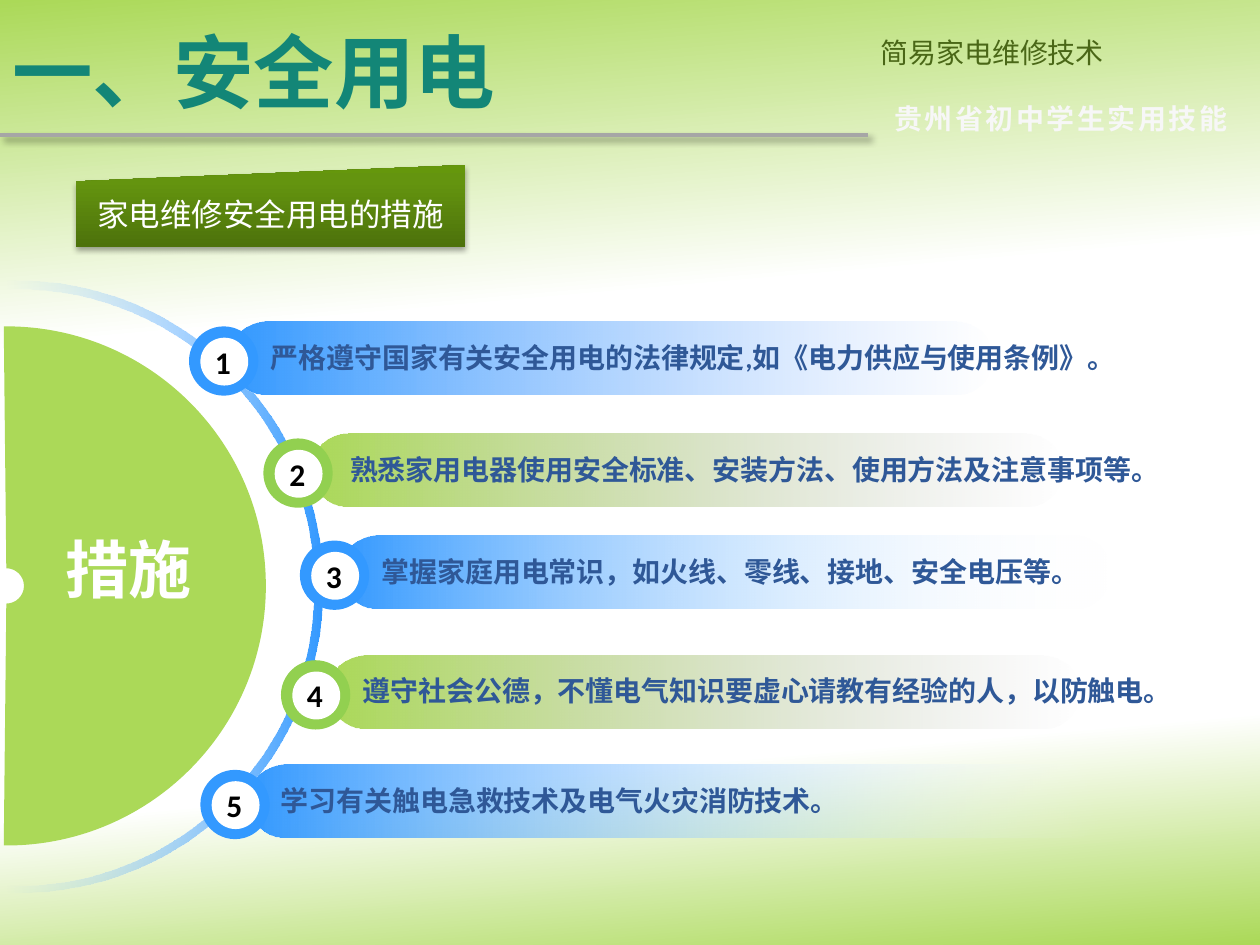
from math import cos, pi, sin

from lxml import etree
from pptx import Presentation
from pptx.dml.color import RGBColor
from pptx.enum.shapes import MSO_CONNECTOR, MSO_SHAPE
from pptx.enum.text import MSO_ANCHOR, MSO_AUTO_SIZE, PP_ALIGN
from pptx.oxml.ns import qn
from pptx.util import Inches, Pt

COLUMN = Inches(1)
ROW = Inches(1)
BANNER = MSO_SHAPE.FLOWCHART_MANUAL_INPUT
BAR = MSO_SHAPE.ROUNDED_RECTANGLE
CIRCLE = MSO_SHAPE.OVAL
STRAIGHT = MSO_CONNECTOR.STRAIGHT
LEFT, CENTER, JUSTIFY = PP_ALIGN.LEFT, PP_ALIGN.CENTER, PP_ALIGN.JUSTIFY
MIDDLE = MSO_ANCHOR.MIDDLE
FIXED, GROW = MSO_AUTO_SIZE.NONE, MSO_AUTO_SIZE.SHAPE_TO_FIT_TEXT

CJK = "Noto Sans CJK SC"
LATIN = "Calibri"
BLUE, LIME, GREEN, WHITE = "3399FF", "ABD958", "92D050", "FFFFFF"
BLUE_FADE = [(0, BLUE, 100), (100, WHITE, 0)]
PALE_BLUE_FADE = [(0, BLUE, 100), (100, "95BCFF", 0)]
LIME_FADE = [(0, LIME, 100), (100, "B5B5B5", 0)]

MEASURES = [
    (1.5, 2.59, 1.82, 6.06, 2.05, BLUE, PALE_BLUE_FADE,
     "严格遵守国家有关安全用电的法律规定,如《电力供应与使用条例》。"),
    (2.09, 3.48, 2.47, 5.96, 2.68, GREEN, LIME_FADE,
     "熟悉家用电器使用安全标准、安装方法、使用方法及注意事项等。"),
    (2.38, 4.29, 2.7, 6.11, 2.93, BLUE, BLUE_FADE,
     "掌握家庭用电常识，如火线、零线、接地、安全电压等。"),
    (2.23, 5.24, 2.61, 5.96, 2.78, GREEN, LIME_FADE,
     "遵守社会公德，不懂电气知识要虚心请教有经验的人，以防触电。"),
    (1.59, 6.11, 1.97, 6.83, 2.13, BLUE, BLUE_FADE,
     "学习有关触电急救技术及电气火灾消防技术。"),
]


def color(value):
    return RGBColor.from_string(value)


def place(left, top, width, height):
    return (int(left * COLUMN), int(top * ROW),
            int(width * COLUMN), int(height * ROW))


def add_color(parent, value, alpha):
    node = etree.SubElement(parent, qn("a:srgbClr"), val=value)
    if alpha < 100:
        etree.SubElement(node, qn("a:alpha"), val=str(alpha * 1000))


def set_gradient(fill, element, stops, angle=0):
    fill.gradient()
    gradient = element.find(".//" + qn("a:gradFill"))
    stop_list = gradient.find(qn("a:gsLst"))
    for stop in list(stop_list):
        stop_list.remove(stop)
    for position, value, alpha in stops:
        stop = etree.SubElement(stop_list, qn("a:gs"), pos=str(position * 1000))
        add_color(stop, value, alpha)
    gradient.find(qn("a:lin")).set("ang", str(angle * 60000))


def set_shadow(element, alpha, blur, distance, angle):
    properties = element.spPr
    effects = properties.find(qn("a:effectLst"))
    if effects is None:
        effects = etree.SubElement(properties, qn("a:effectLst"))
    shadow = etree.SubElement(
        effects, qn("a:outerShdw"), blurRad=str(Pt(blur)), dist=str(Pt(distance)),
        dir=str(angle * 60000), algn="ctr", rotWithShape="0")
    add_color(shadow, "000000", alpha)


def paint(shape, fill, angle=0):
    shape.shadow.inherit = False
    shape.line.fill.background()
    if isinstance(fill, str):
        shape.fill.solid()
        shape.fill.fore_color.rgb = color(fill)
    else:
        set_gradient(shape.fill, shape._element, fill, angle)


def add_shape(shapes, kind, area, fill, angle=0):
    shape = shapes.add_shape(kind, *place(*area))
    paint(shape, fill, angle)
    return shape


def write(shape, text, size, value, font=CJK, bold=False, align=LEFT, spacing=0):
    para = shape.text_frame.paragraphs[0]
    para.text = text
    para.alignment = align
    para.font.size = Pt(size)
    para.font.bold = bold
    para.font.name = font
    para.font.color.rgb = color(value)
    style = para._p.pPr.find(qn("a:defRPr"))
    etree.SubElement(style, qn("a:ea"), typeface=CJK)
    if spacing:
        style.set("spc", str(int(spacing * 100)))


def add_text(shapes, area, text, size, value, wrap=True, resize=GROW, **style):
    box = shapes.add_textbox(*place(*area))
    box.text_frame.word_wrap = wrap
    box.text_frame.auto_size = resize
    write(box, text, size, value, **style)
    return box


def quarter_arcs(x, y, radius, turn):
    pull = 4 / 3 * (2 ** 0.5 - 1) * turn
    curves = []
    for start in (-turn * pi / 2, 0):
        end = start + turn * pi / 2
        curves.append([
            (x + radius * (cos(start) - pull * sin(start)),
             y + radius * (sin(start) + pull * cos(start))),
            (x + radius * (cos(end) + pull * sin(end)),
             y + radius * (sin(end) - pull * cos(end))),
            (x + radius * cos(end), y + radius * sin(end))])
    return curves


def add_outline(shapes, area, start, pieces, fill):
    left, top, width, height = place(*area)
    corners = [(int(x * COLUMN), int(y * ROW))
               for x, y in [start] + [piece[-1] for piece in pieces]]
    builder = shapes.build_freeform(*corners[0])
    builder.add_line_segments(corners[1:], close=True)
    shape = builder.convert_to_shape()
    shape.left, shape.top, shape.width, shape.height = left, top, width, height
    outline = shape._element.find(".//" + qn("a:pathLst"))[0]
    outline.set("w", str(width))
    outline.set("h", str(height))
    for segment, points in zip(list(outline), [[start]] + pieces):
        if len(points) == 3:
            curve = etree.Element(qn("a:cubicBezTo"))
            outline.replace(segment, curve)
            segment = curve
        for point in list(segment):
            segment.remove(point)
        for x, y in points:
            etree.SubElement(segment, qn("a:pt"), x=str(int(x * COLUMN) - left),
                             y=str(int(y * ROW) - top))
    paint(shape, fill)


def add_header(shapes):
    banner = add_shape(shapes, BANNER, (0.6, 1.31, 3.09, 0.65),
                       [(0, "4D720B", 100), (80, "64940F", 100), (100, "65970C", 100)], 270)
    set_shadow(banner._element, 35, 3.1, 1.8, 90)
    banner.text_frame.vertical_anchor = MIDDLE
    write(banner, "家电维修安全用电的措施", 18, WHITE, align=CENTER)

    left, top, right, bottom = place(0, 1.07, 6.89, 1.07)
    rule = shapes.add_connector(STRAIGHT, left, top, right, bottom)
    rule.line.color.rgb = color("A6A6A6")
    rule.line.width = Pt(2.25)
    set_shadow(rule._element, 40, 4, 3, 45)

    add_text(shapes, (6.89, 0.23, 3.11, 0.37), "简易家电维修技术", 16, "4A6717", align=JUSTIFY)
    add_text(shapes, (7, 0.76, 3, 0.37), "贵州省初中学生实用技能", 16, "F7F7F7",
             bold=True, spacing=1.5)
    title = add_text(shapes, (0, 0.05, 6.89, 1.02), "一、安全用电", 46, "138677",
                     resize=FIXED, bold=True)
    title.text_frame.vertical_anchor = MIDDLE


def add_hub(shapes):
    ring = ([[(0.13, 2.3)]] + quarter_arcs(0.13, 4.66, 2.36, 1)
            + [[(0.05, 7.02)], [(0.05, 7.08)], [(0.13, 7.08)]]
            + quarter_arcs(0.13, 4.66, 2.43, -1) + [[(0.05, 2.23)]])
    add_outline(shapes, (-2.29, 2.23, 4.85, 4.85), (0.05, 2.3), ring,
                [(0, WHITE, 0), (100, BLUE, 100)])
    half_disk = (quarter_arcs(0.05, 4.65, 0.14, 1) + [[(0.03, 6.71)], [(0.05, 6.71)]]
                 + quarter_arcs(0.05, 4.65, 2.06, -1) + [[(0.03, 2.59)]])
    add_outline(shapes, (-2.01, 2.59, 4.12, 4.12), (0.05, 4.51), half_disk, LIME)


def add_measure(shapes, number, measure):
    left, top, bar_left, bar_width, text_left, accent, fade, text = measure
    bar = add_shape(shapes, BAR, (bar_left, top - 0.04, bar_width, 0.58), fade)
    bar.adjustments[0] = 0.5
    add_shape(shapes, CIRCLE, (left, top, 0.55, 0.55), accent)
    add_shape(shapes, CIRCLE, (left + 0.09, top + 0.09, 0.38, 0.38), WHITE)
    add_text(shapes, (left + 0.1, top + 0.08, 0.34, 0.4), str(number), 18, "000000",
             wrap=False, font=LATIN, bold=True, align=CENTER)
    text_width = len(text) * 16 / 72 + 0.2
    add_text(shapes, (text_left, top + 0.06, text_width, 0.37), text, 16, "2F5897",
             wrap=False, font=LATIN, bold=True)


def main():
    deck = Presentation()
    deck.slide_width, deck.slide_height = 10 * COLUMN, int(7.5 * ROW)
    page = deck.slides.add_slide(deck.slide_layouts[6])
    set_gradient(page.background.fill, page._element,
                 [(0, LIME, 100), (33, WHITE, 100), (52, WHITE, 100),
                  (78, WHITE, 100), (100, LIME, 100)], 85)
    add_header(page.shapes)
    add_hub(page.shapes)
    for number, measure in enumerate(MEASURES, 1):
        add_measure(page.shapes.add_group_shape().shapes, number, measure)
    add_text(page.shapes, (0.27, 4.16, 1.5, 0.71), "措施", 36, WHITE, bold=True, align=CENTER)
    deck.save("out.pptx")


if __name__ == "__main__":
    main()
